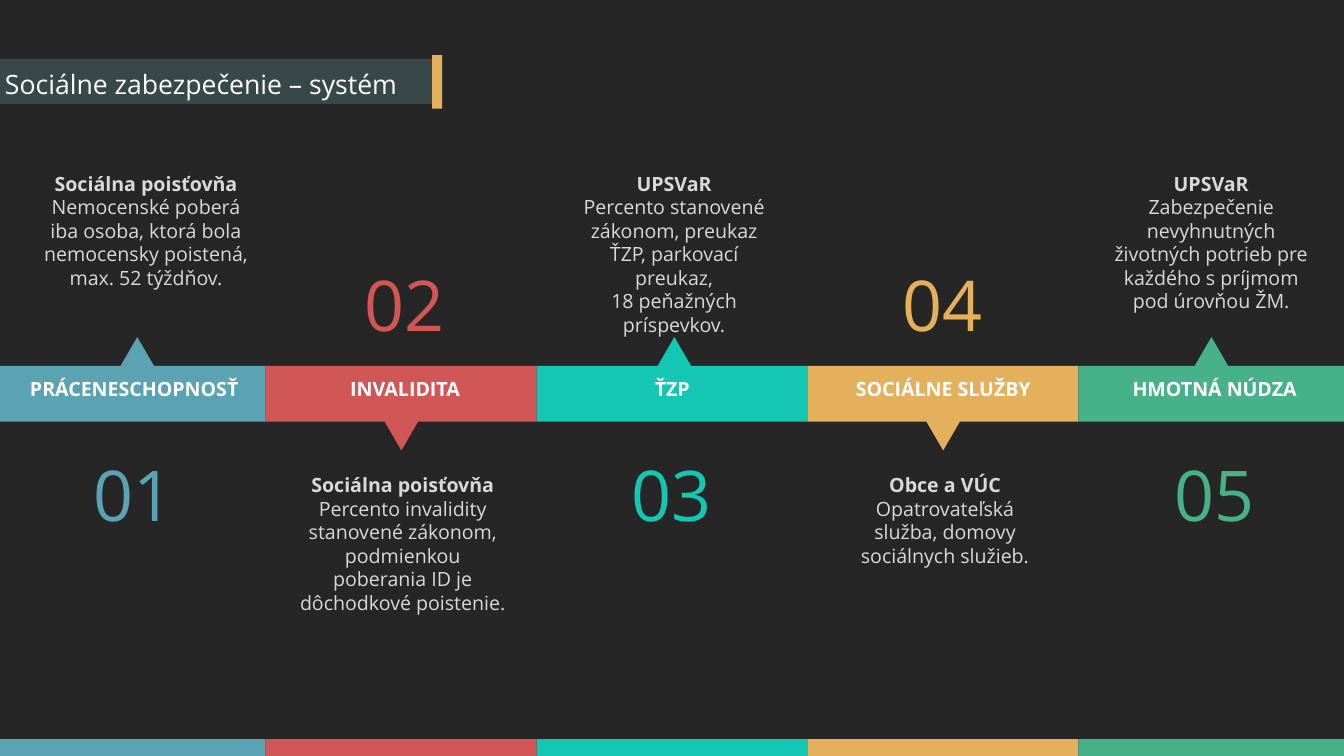
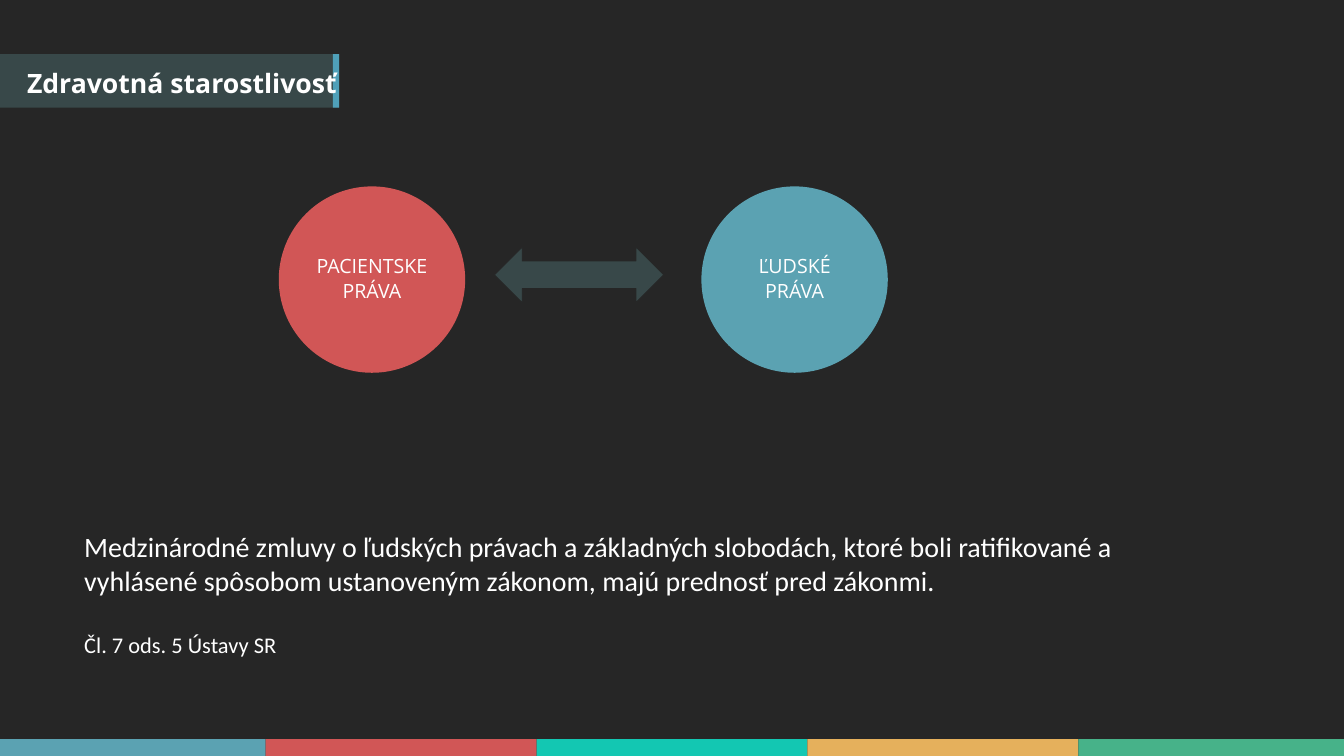
import pptx
import pptx.util
import pptx.dml.color
import pptx.enum.shapes
import pptx.enum.text

PX = 9525  # EMU in one px (96 px to the inch)
SLIDE_WIDTH, SLIDE_HEIGHT = 2560, 1440

BACKGROUND = "262626"
SLATE = "384849"
WHITE = "FFFFFF"
LIGHT_GREY = "D9D9D9"
BLUE, RED, TEAL, AMBER, GREEN = "5BA2B2", "D15656", "13C7B2", "E5B05C", "47B289"
STAGE_COLOURS = [BLUE, RED, TEAL, AMBER, GREEN]
COLUMN_EDGES = [0, 506, 1022, 1538, 2054, SLIDE_WIDTH]

HEADING_FONT = "Open Sans"
BODY_FONT = "Calibri"

colour = pptx.dml.color.RGBColor.from_string
Shapes = pptx.enum.shapes.MSO_SHAPE
Align = pptx.enum.text.PP_ALIGN


def add_shape(slide, preset, left, top, width, height, fill=None):
    """Add a flat preset shape, or a text box when preset is None."""
    box = [length * PX for length in (left, top, width, height)]
    if preset is None:
        return slide.shapes.add_textbox(*box)
    shape = slide.shapes.add_shape(preset, *box)
    shape.shadow.inherit = False
    shape.fill.solid()
    shape.fill.fore_color.rgb = colour(fill)
    shape.line.fill.background()
    return shape


def write_text(shape, text, size, text_colour=WHITE, font=HEADING_FONT,
               bold=False, align=Align.CENTER):
    """Fill a shape with text, one paragraph to a line, and return its frame."""
    frame = shape.text_frame
    frame.text = text
    frame.word_wrap = True
    for paragraph in frame.paragraphs:
        paragraph.alignment = align
        for run in paragraph.runs:
            run.font.name = font
            run.font.size = pptx.util.Pt(size)
            run.font.bold = bold
            run.font.color.rgb = colour(text_colour)
    return frame


presentation = pptx.Presentation()
presentation.slide_width = SLIDE_WIDTH * PX
presentation.slide_height = SLIDE_HEIGHT * PX

# Shared look: background, colour strip at the foot, title band with accent.
# Band, accent and title boxes are (left, top, width, height).
headers = [
    ("Sociálne zabezpečenie – systém", False, AMBER,
     (0, 112, 842, 86), (823, 105, 19, 102), (0, 125, 861, 71)),
    ("Zdravotná starostlivosť", True, "4FA0B9",
     (0, 103, 646, 102), (634, 103, 12, 102), (42, 123, 979, 71)),
]
slides = []
for title, title_bold, accent_colour, band_box, accent_box, title_box in headers:
    slide = presentation.slides.add_slide(presentation.slide_layouts[6])
    slide.background.fill.solid()
    slide.background.fill.fore_color.rgb = colour(BACKGROUND)
    for left, right, fill in zip(COLUMN_EDGES, COLUMN_EDGES[1:], STAGE_COLOURS):
        add_shape(slide, Shapes.RECTANGLE, left, 1408, right - left, 32, fill)
    add_shape(slide, Shapes.RECTANGLE, *band_box, SLATE)
    add_shape(slide, Shapes.RECTANGLE, *accent_box, accent_colour)
    write_text(add_shape(slide, None, *title_box), title, 38,
               bold=title_bold, align=Align.LEFT)
    slides.append(slide)
system_slide, care_slide = slides

# Slide 1: five stages, with details alternately above and below the band.
# Each stage: label, details, label centre, pointer centre, details centre and height.
stages = [
    ("PRÁCENESCHOPNOSŤ",
     "Sociálna poisťovňa\nNemocenské poberá iba osoba, ktorá bola nemocensky "
     "poistená, max. 52 týždňov.", 255, 261, 278, 236),
    ("INVALIDITA",
     "Sociálna poisťovňa\nPercento invalidity stanovené zákonom, podmienkou "
     "poberania ID je dôchodkové poistenie.", 771, 764, 767, 317),
    ("ŤZP",
     "UPSVaR\nPercento stanovené zákonom, preukaz ŤZP, parkovací preukaz,\n"
     "18 peňažných príspevkov.", 1280, 1284, 1284, 281),
    ("SOCIÁLNE SLUŽBY",
     "Obce a VÚC\nOpatrovateľská služba, domovy sociálnych služieb.",
     1796, 1796, 1800, 191),
    ("HMOTNÁ NÚDZA",
     "UPSVaR\nZabezpečenie nevyhnutných životných potrieb pre každého "
     "s príjmom pod úrovňou ŽM.", 2313, 2307, 2307, 281),
]
LABEL_WIDTH, NUMBER_WIDTH, DETAILS_WIDTH, POINTER_WIDTH = 419, 374, 410, 65

for index, stage in enumerate(stages):
    label, details, label_centre, pointer_centre, details_centre, details_height = stage
    stage_colour = STAGE_COLOURS[index]
    left, right = COLUMN_EDGES[index:index + 2]
    details_above = index % 2 == 0
    if details_above:
        pointer_top, details_top, number_top = 642, 322, 856
    else:
        pointer_top, details_top, number_top = 802, 896, 493

    # Band segment and its pointer
    add_shape(system_slide, Shapes.RECTANGLE, left, 697, right - left, 106, stage_colour)
    pointer = add_shape(system_slide, Shapes.ISOSCELES_TRIANGLE,
                        pointer_centre - POINTER_WIDTH // 2, pointer_top,
                        POINTER_WIDTH, 56, stage_colour)
    pointer.rotation = 0 if details_above else 180

    # Label, number and details
    label_box = add_shape(system_slide, None, label_centre - LABEL_WIDTH // 2, 714,
                          LABEL_WIDTH, 55)
    write_text(label_box, label, 28, bold=True)
    number_box = add_shape(system_slide, None, label_centre - NUMBER_WIDTH // 2,
                           number_top, NUMBER_WIDTH, 171)
    write_text(number_box, f"{index + 1:02d}", 100, stage_colour)
    details_box = add_shape(system_slide, None, details_centre - DETAILS_WIDTH // 2,
                            details_top, DETAILS_WIDTH, details_height)
    details_frame = write_text(details_box, details, 28, LIGHT_GREY)
    details_frame.paragraphs[0].runs[0].font.bold = True

# Slide 2: two circles of rights joined by a double arrow
for left, rights, fill in [(531, "PACIENTSKE\nPRÁVA", RED),
                           (1336, "ĽUDSKÉ\nPRÁVA", BLUE)]:
    circle = add_shape(care_slide, Shapes.OVAL, left, 355, 355, 355, fill)
    frame = write_text(circle, rights, 28)
    frame.vertical_anchor = pptx.enum.text.MSO_ANCHOR.MIDDLE
    frame.margin_left = frame.margin_right = 4 * PX
    frame.margin_top = frame.margin_bottom = 4 * PX
    for paragraph in frame.paragraphs:
        paragraph.line_spacing = 0.9
        paragraph.space_after = pptx.util.Pt(6)

arrow = add_shape(care_slide, Shapes.LEFT_RIGHT_ARROW, 942, 471, 322, 105, SLATE)
arrow.line.color.rgb = colour(BACKGROUND)
arrow.line.width = pptx.util.Pt(1)

# Slide 2: quotation and its reference
quotation_box = add_shape(care_slide, None, 151, 880, 2139, 436)
frame = write_text(
    quotation_box,
    "Medzinárodné zmluvy o ľudských právach a základných slobodách, ktoré boli "
    "ratifikované a vyhlásené spôsobom ustanoveným zákonom, majú prednosť pred "
    "zákonmi.\nČl. 7 ods. 5 Ústavy SR",
    40, font=BODY_FONT, align=Align.LEFT)
frame.margin_top = 129 * PX
reference = frame.paragraphs[1]
reference.space_before = pptx.util.Pt(49)
reference.runs[0].font.size = pptx.util.Pt(32)

presentation.save("out.pptx")
